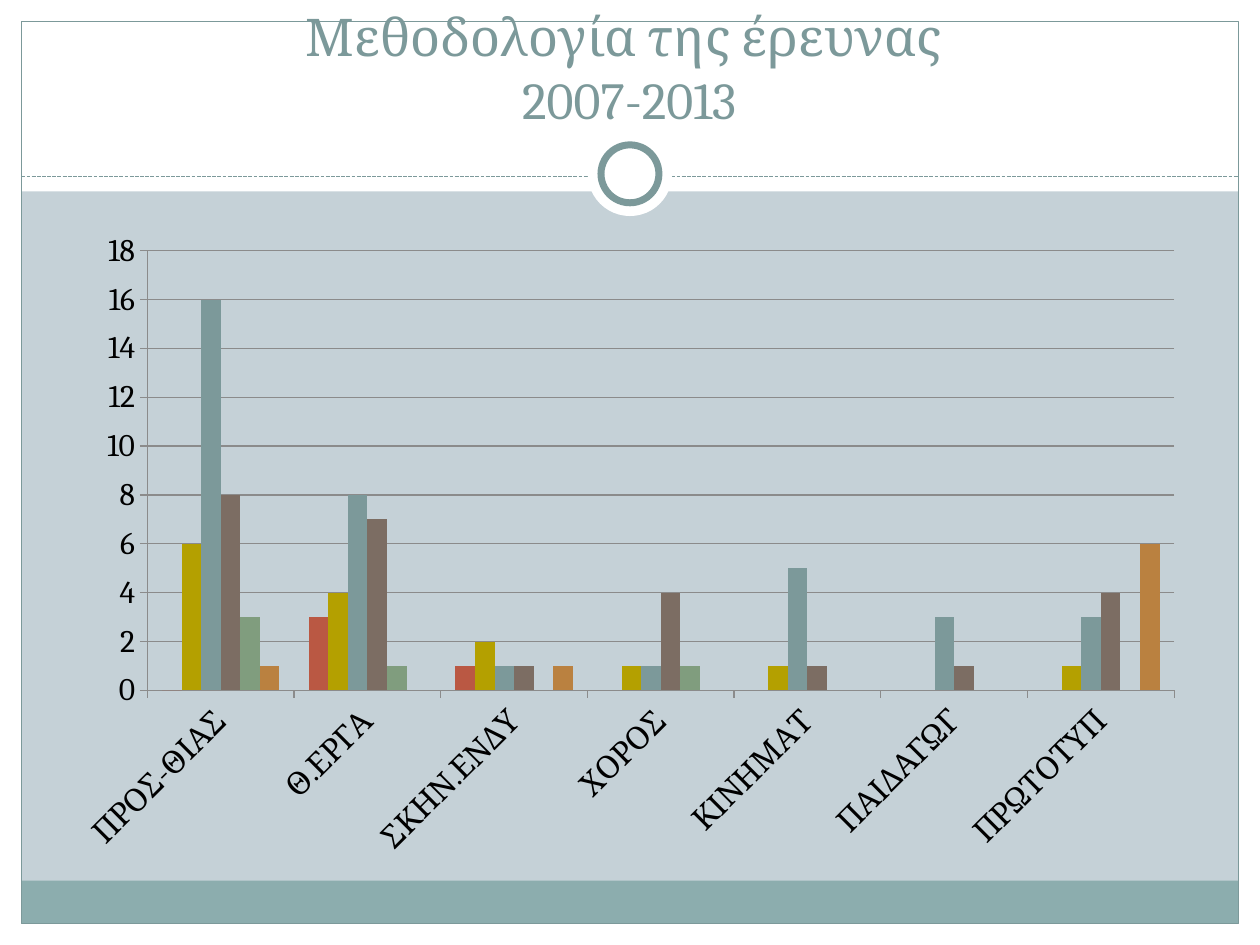
"""Build the research methodology slide: a framed title above a clustered column chart."""
import pptx
import pptx.chart.data
import pptx.dml.color
import pptx.enum.chart
import pptx.enum.dml
import pptx.enum.shapes
import pptx.enum.text
import pptx.oxml
import pptx.oxml.ns
import pptx.util

COLOURS = {"ground": "C5D1D7", "white": "FFFFFF", "band": "8CADAE", "frame": "7C999A",
           "text": "000000", "grid": "8B8B8B"}
BAR_COLOURS = ["BA5843", "B4A000", "7C999A", "7C6D63", "809D7E", "BA8140"]
FONT = "Cambria"
WIDTH, HEIGHT, MARGIN = 10, 7.5, 0.17
CHART_WIDTH, CHART_HEIGHT = 9, 5.15
RGB = pptx.dml.color.RGBColor.from_string
SHAPES = pptx.enum.shapes.MSO_SHAPE
inches = pptx.util.Inches

deck = pptx.Presentation()
deck.slide_width, deck.slide_height = inches(WIDTH), inches(HEIGHT)
slide = deck.slides.add_slide(deck.slide_layouts[6])
slide.background.fill.solid()
slide.background.fill.fore_color.rgb = RGB(COLOURS["ground"])


def add_panel(kind, box, fill=None, line_width=None):
    panel = slide.shapes.add_shape(kind, *map(inches, box))
    panel.shadow.inherit = False
    if fill:
        panel.fill.solid()
        panel.fill.fore_color.rgb = RGB(COLOURS[fill])
    else:
        panel.fill.background()
    if line_width:
        panel.line.color.rgb = RGB(COLOURS["frame"])
        panel.line.width = pptx.util.Pt(line_width)
    else:
        panel.line.fill.background()


inner_width, inner_height = WIDTH - 2 * MARGIN, HEIGHT - 2 * MARGIN
for box, fill, line_width in [
    ((0, HEIGHT - MARGIN, WIDTH, MARGIN), "white", None),
    ((0, 0, WIDTH, 1.52), "white", None),
    ((0, 0, MARGIN, HEIGHT), "white", None),
    ((WIDTH - MARGIN, 0, MARGIN, HEIGHT), "white", None),
    ((MARGIN, 6.99, inner_width, 0.34), "band", None),
    ((MARGIN, MARGIN, inner_width, inner_height), None, 0.75),
]:
    add_panel(SHAPES.RECTANGLE, box, fill, line_width)

divider = slide.shapes.add_connector(
    pptx.enum.shapes.MSO_CONNECTOR.STRAIGHT,
    *map(inches, (MARGIN, 1.4, WIDTH - MARGIN, 1.4)))
divider.line.color.rgb = RGB(COLOURS["frame"])
divider.line.width = pptx.util.Pt(0.75)
divider.line.dash_style = pptx.enum.dml.MSO_LINE.SQUARE_DOT
divider._element.spPr.append(pptx.oxml.parse_xml(
    f'<a:effectLst {pptx.oxml.ns.nsdecls("a")}/>'))

for diameter, line_width in [(0.67, None), (0.46, 4)]:
    left, top = WIDTH / 2 - diameter / 2, 1.38 - diameter / 2
    add_panel(SHAPES.OVAL, (left, top, diameter, diameter), "white", line_width)

title = slide.shapes.add_textbox(*map(inches, (0.33, 0.25, 9.33, 0.83))).text_frame
title.word_wrap = True
title.vertical_anchor = pptx.enum.text.MSO_ANCHOR.BOTTOM
heading = title.paragraphs[0]
heading.alignment = pptx.enum.text.PP_ALIGN.CENTER
for position, wording in enumerate(["Μεθοδολογία της έρευνας ", "2007-2013"]):
    if position:
        heading.add_line_break()
    run = heading.add_run()
    run.text = wording
    run.font.name, run.font.size = FONT, pptx.util.Pt(29.7)
    run.font.color.rgb = RGB(COLOURS["frame"])

counts = pptx.chart.data.CategoryChartData()
counts.categories = ["ΠΡΟΣ-ΘΙΑΣ", "Θ.ΕΡΓΑ", "ΣΚΗΝ.ΕΝΔΥ", "ΧΟΡΟΣ", "ΚΙΝΗΜΑΤ", "ΠΑΙΔΑΓΩΓ", "ΠΡΩΤΟΤΥΠ"]
for number, values in enumerate([
    (0, 3, 1, None, None, None, None),
    (6, 4, 2, 1, 1, None, 1),
    (16, 8, 1, 1, 5, 3, 3),
    (8, 7, 1, 4, 1, 1, 4),
    (3, 1, None, 1, None, None, None),
    (1, None, 1, None, None, None, 6),
    (), (), (),
], start=1):
    counts.add_series(f"Series {number}", values)

chart = slide.shapes.add_chart(
    pptx.enum.chart.XL_CHART_TYPE.COLUMN_CLUSTERED,
    *map(inches, (0.5, 1.75, CHART_WIDTH, CHART_HEIGHT)), counts).chart
chart.has_legend = chart.has_title = False
chart.font.name, chart.font.size = FONT, pptx.util.Pt(18)
chart.font.color.rgb = RGB(COLOURS["text"])
columns = chart.plots[0]
columns.vary_by_categories = False
columns.gap_width, columns.overlap = 150, 0
for number, series in enumerate(columns.series):
    series.format.fill.solid()
    series.format.fill.fore_color.rgb = RGB(BAR_COLOURS[number % len(BAR_COLOURS)])
    series.invert_if_negative = False
    if number >= len(BAR_COLOURS):
        series._element.remove(series._element.find(pptx.oxml.ns.qn("c:val")))

chart.value_axis.minimum_scale, chart.value_axis.maximum_scale = 0, 18
chart.value_axis.major_unit = 2
chart.value_axis.has_major_gridlines = True
for axis in (chart.category_axis, chart.value_axis):
    axis.major_tick_mark = pptx.enum.chart.XL_TICK_MARK.OUTSIDE
    axis.tick_labels.font.size = pptx.util.Pt(18)
for rule in (chart.category_axis, chart.value_axis, chart.value_axis.major_gridlines):
    rule.format.line.color.rgb = RGB(COLOURS["grid"])
    rule.format.line.width = pptx.util.Pt(0.75)
chart.category_axis._element.txPr.find(pptx.oxml.ns.qn("a:bodyPr")).set("rot", "-2700000")

plot_area = chart._chartSpace.chart.plotArea
for old_layout in plot_area.findall(pptx.oxml.ns.qn("c:layout")):
    plot_area.remove(old_layout)
shares = "".join(f'<c:{key} val="{length / whole}"/>' for key, length, whole in [
    ("x", 0.67, CHART_WIDTH), ("y", 0.24, CHART_HEIGHT),
    ("w", 8.15, CHART_WIDTH), ("h", 3.49, CHART_HEIGHT)])
plot_area.insert(0, pptx.oxml.parse_xml(
    f'<c:layout {pptx.oxml.ns.nsdecls("c")}><c:manualLayout><c:layoutTarget val="inner"/>'
    f'<c:xMode val="edge"/><c:yMode val="edge"/>{shares}</c:manualLayout></c:layout>'))

deck.save("out.pptx")
